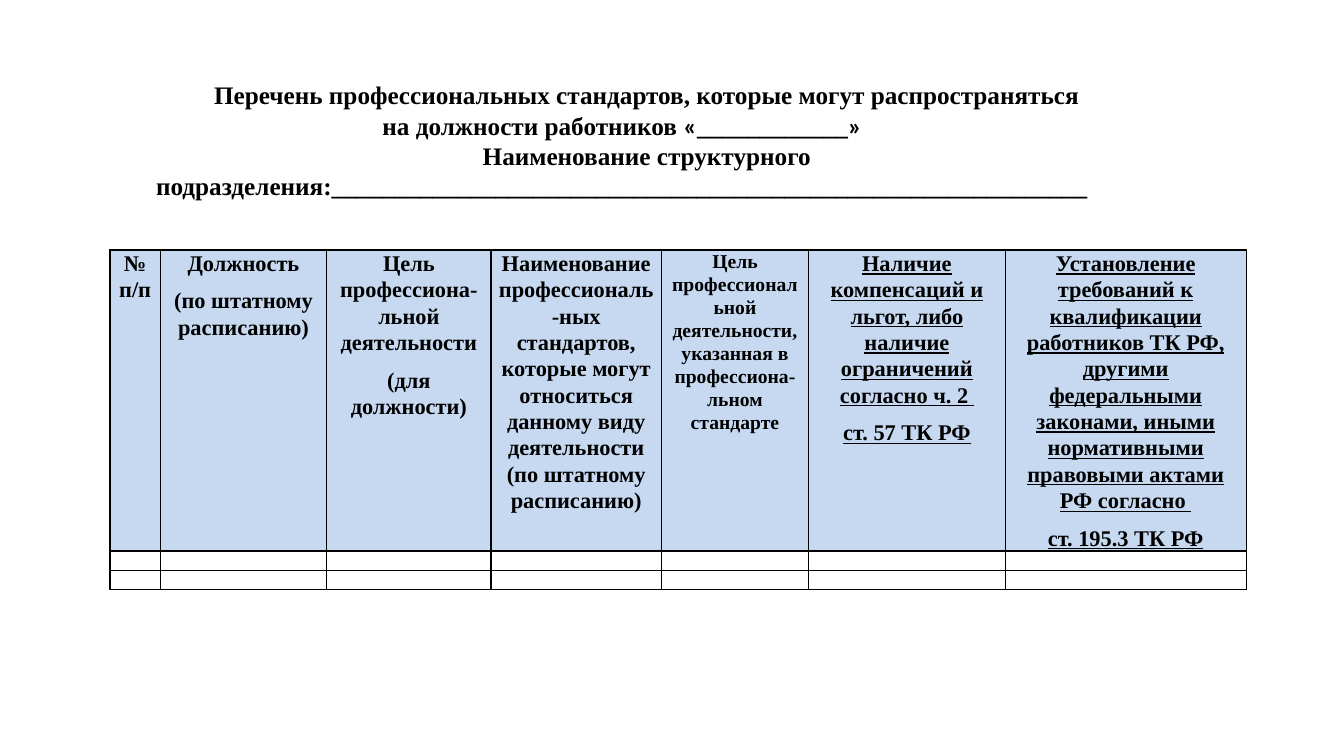
from lxml.etree import SubElement
from pptx import Presentation
from pptx.dml.color import RGBColor
from pptx.enum.text import MSO_ANCHOR, PP_ALIGN
from pptx.oxml.ns import qn
from pptx.util import Inches, Pt

SERIF, SANS = "Times New Roman", "Calibri"
BLACK, HEADER_BLUE = "000000", "C6D9F1"

# Title: paragraphs made of (text, font) spans
TITLE = [
    [("Перечень профессиональных стандартов, которые могут распространяться "
      "на должности работников ", SERIF),
     ("«", SANS), ("_" * 12, SERIF), ("»", SANS)],
    [("Наименование структурного подразделения:" + "_" * 60, SERIF)],
]

# Table columns: width, text size, underline, paragraphs of the heading
COLUMNS = [
    (0.5, 16, False, ["№ п/п"]),
    (1.65, 16, False, ["Должность", "(по штатному расписанию)"]),
    (1.63, 16, False, ["Цель профессиона-льной деятельности",
                       "(для должности)"]),
    (1.69, 16, False, ["Наименование профессиональ-ных стандартов, которые "
                       "могут относиться данному виду деятельности "
                       "(по штатному расписанию)"]),
    (1.46, 14, False, ["Цель профессиональной деятельности, указанная в "
                       "профессиона-льном стандарте"]),
    (1.95, 16, True, ["Наличие компенсаций и льгот, либо наличие ограничений "
                      "согласно ч. 2 ", "ст. 57 ТК РФ"]),
    (2.39, 16, True, ["Установление требований к квалификации работников "
                      "ТК РФ, другими федеральными законами, иными "
                      "нормативными правовыми актами РФ согласно ",
                      "ст. 195.3 ТК РФ"]),
]
ROW_HEIGHTS = [2.98, 0.19, 0.19]
TABLE_LEFT, TABLE_TOP = 1.09, 2.48


def color(value):
    return RGBColor.from_string(value)


def add_span(para, text, size, font=SERIF, underline=False):
    span = para.add_run()
    span.text = text
    span.font.name, span.font.size = font, Pt(size)
    span.font.bold = True
    if underline:
        span.font.underline = True
    span.font.color.rgb = color(BLACK)


def add_borders(cell):
    properties = cell._tc.get_or_add_tcPr()
    for position, side in enumerate(("lnL", "lnR", "lnT", "lnB")):
        line = properties.makeelement(qn("a:" + side), {"w": str(Pt(1))})
        fill = SubElement(line, qn("a:solidFill"))
        SubElement(fill, qn("a:srgbClr"), val=BLACK)
        properties.insert(position, line)


def paragraphs(frame, count):
    return [frame.paragraphs[0]] + [frame.add_paragraph() for _ in range(count - 1)]


deck = Presentation()
deck.slide_width, deck.slide_height = Inches(13.33), Inches(7.5)
page = deck.slides.add_slide(deck.slide_layouts[6])

# Table
widths = [column[0] for column in COLUMNS]
table = page.shapes.add_table(
    len(ROW_HEIGHTS), len(COLUMNS), Inches(TABLE_LEFT), Inches(TABLE_TOP),
    Inches(sum(widths)), Inches(sum(ROW_HEIGHTS))).table
table.first_row = table.horz_banding = False
for row, height in zip(table.rows, ROW_HEIGHTS):
    row.height = Inches(height)
for number, (width, size, underline, heading) in enumerate(COLUMNS):
    table.columns[number].width = Inches(width)
    for row in range(len(ROW_HEIGHTS)):
        cell = table.cell(row, number)
        cell.margin_left = cell.margin_right = Inches(0.07)
        cell.margin_top = cell.margin_bottom = 0
        if row == 0:
            cell.fill.solid()
            cell.fill.fore_color.rgb = color(HEADER_BLUE)
            for para, text in zip(paragraphs(cell.text_frame, len(heading)), heading):
                para.alignment = PP_ALIGN.CENTER
                para.line_spacing, para.space_after = 1.06, Pt(8)
                add_span(para, text, size, underline=underline)
        else:
            # Small text size keeps the empty rows low
            cell.fill.background()
            SubElement(cell.text_frame.paragraphs[0]._p, qn("a:endParaRPr"), sz="1100")
        add_borders(cell)

# Title
box = page.shapes.add_textbox(Inches(1.41), Inches(0.73), Inches(9.52), Inches(1.62))
frame = box.text_frame
frame.word_wrap = True
frame.vertical_anchor = MSO_ANCHOR.MIDDLE
frame.margin_bottom = Inches(0.35)
for para, spans in zip(paragraphs(frame, len(TITLE)), TITLE):
    para.alignment = PP_ALIGN.CENTER
    para._p.get_or_add_pPr().set("indent", str(Inches(0.49)))
    for text, font in spans:
        add_span(para, text, 18, font)

deck.save("out.pptx")
